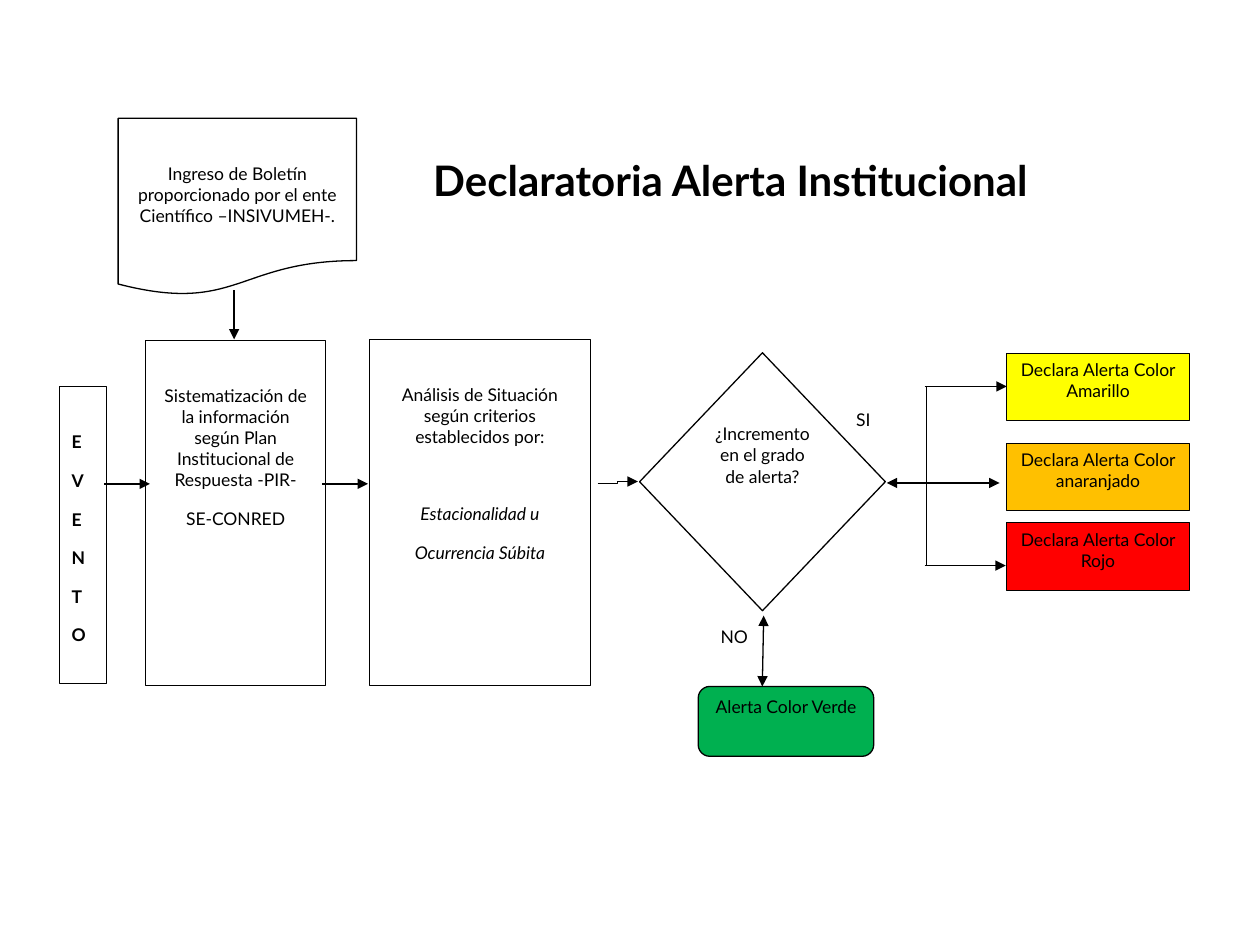
from dataclasses import dataclass, field

from lxml.etree import SubElement
from pptx import Presentation
from pptx.dml.color import RGBColor
from pptx.enum.shapes import MSO_CONNECTOR, MSO_SHAPE
from pptx.enum.text import MSO_ANCHOR, MSO_AUTO_SIZE, PP_ALIGN
from pptx.oxml.ns import qn
from pptx.util import Pt

COLORS = {
    "black": "000000",
    "white": "FFFFFF",
    "green": "00B050",
    "yellow": "FFFF00",
    "orange": "FFC000",
    "red": "FF0000",
}
BASE = {"name": "Lato", "size": Pt(10)}
BOLD = BASE | {"bold": True}
SLANT = BASE | {"italic": True}
TITLE = BOLD | {"size": Pt(24)}
INSET = {"left": 7.2, "top": 3.6, "right": 7.2, "bottom": 3.6}
LOW = INSET | {"top": 25.6}
NONE = dict.fromkeys(INSET, 0)


@dataclass
class Para:
    text: str
    style: dict
    before: float = 0
    after: float = 10


@dataclass
class Box:
    kind: MSO_SHAPE
    area: tuple[float, float, float, float]
    paras: list[Para]
    fill: str = "white"
    width: float = 0.5
    inset: dict = field(default_factory=lambda: INSET)
    align: PP_ALIGN = PP_ALIGN.CENTER


@dataclass
class Label:
    area: tuple[float, float, float, float]
    para: Para
    inset: dict
    wrap: bool = True


@dataclass
class Wire:
    start: tuple[float, float]
    end: tuple[float, float]
    tips: tuple[str, ...] = ("tailEnd",)
    kind: MSO_CONNECTOR = MSO_CONNECTOR.STRAIGHT


BOTH = ("headEnd", "tailEnd")
RECT = MSO_SHAPE.RECTANGLE
STEPS = [
    Box(MSO_SHAPE.FLOWCHART_ALTERNATE_PROCESS, (399, 392.3, 100.3, 39.9),
        [Para("Alerta Color Verde", BASE)], "green", 0.75),
    Box(MSO_SHAPE.FLOWCHART_DOCUMENT, (67.5, 67.6, 136.2, 101.4),
        [Para("Ingreso de Boletín proporcionado por el ente Científico "
              "–INSIVUMEH-.", BASE)], width=0.75, inset=LOW),
    Box(RECT, (83.2, 194.6, 102.8, 196.9),
        [Para("Sistematización de la información según Plan Institucional "
              "de Respuesta -PIR-", BASE), Para("SE-CONRED", BASE)], inset=LOW),
    Box(RECT, (33.9, 221, 27, 169.4), [Para(c, BOLD) for c in "EVENTO"],
        inset=LOW, align=PP_ALIGN.JUSTIFY),
    Box(RECT, (211, 193.9, 126.4, 197.7),
        [Para("Análisis de Situación según criterios establecidos por:", BASE),
         Para("Estacionalidad u", SLANT, before=22),
         Para("Ocurrencia Súbita", SLANT)], inset=LOW),
    Box(MSO_SHAPE.FLOWCHART_DECISION, (365.5, 201.6, 140.4, 147.4),
        [Para("¿Incremento en el grado de alerta?", BASE)], width=0.75),
]
ALERTS = [
    ("Amarillo", "yellow", 201.8),
    ("anaranjado", "orange", 253.3),
    ("Rojo", "red", 298.6),
]
WIRES = [
    Wire((133.8, 166), (133.8, 194)),
    Wire((341.5, 276.5), (364.5, 275.2), kind=MSO_CONNECTOR.ELBOW),
    Wire((529.6, 323.2), (529.6, 220.4), ()),
    Wire((528.3, 220.8), (575.3, 220.8)),
    Wire((528.3, 323.2), (574.7, 323.2)),
    Wire((184, 276.5), (210.3, 276.5)),
    Wire((59.5, 276.5), (85.7, 276.5)),
    Wire((506.7, 276), (571.2, 276), BOTH),
    Wire((436.4, 351.8), (435.6, 392.3), BOTH),
]
LABELS = [
    Label((411.8, 357.8, 33.8, 18.7), Para("NO", BASE), NONE),
    Label((489.3, 233.7, 33.8, 18.7), Para("SI", BASE), NONE),
    Label((240.5, 85, 371.5, 36.4),
          Para("Declaratoria Alerta Institucional", TITLE, after=0), INSET, False),
]


def tint(name: str) -> RGBColor:
    return RGBColor.from_string(COLORS[name])


def write(frame, paras: list[Para], inset: dict, align: PP_ALIGN) -> None:
    frame.word_wrap = True
    frame.vertical_anchor = MSO_ANCHOR.TOP
    for side, gap in inset.items():
        setattr(frame, f"margin_{side}", Pt(gap))
    for i, para in enumerate(paras):
        line = frame.add_paragraph() if i else frame.paragraphs[0]
        line.alignment = align
        if para.before:
            line.space_before = Pt(para.before)
        line.space_after = Pt(para.after)
        run = line.add_run()
        run.text = para.text
        for key, value in para.style.items():
            setattr(run.font, key, value)
        run.font.color.rgb = tint("black")


def draw_box(slide, box: Box) -> None:
    shape = slide.shapes.add_shape(box.kind, *map(Pt, box.area))
    shape.shadow.inherit = False
    shape.fill.solid()
    shape.fill.fore_color.rgb = tint(box.fill)
    shape.line.color.rgb = tint("black")
    shape.line.width = Pt(box.width)
    write(shape.text_frame, box.paras, box.inset, box.align)


def draw_wire(slide, wire: Wire) -> None:
    link = slide.shapes.add_connector(wire.kind, *map(Pt, wire.start + wire.end))
    link.line.color.rgb = tint("black")
    link.line.width = Pt(0.75)
    props = link.element.spPr
    for tip in wire.tips:
        SubElement(props.find(qn("a:ln")), qn(f"a:{tip}"), type="triangle")
    SubElement(props, qn("a:effectLst"))


def draw_label(slide, label: Label) -> None:
    frame = slide.shapes.add_textbox(*map(Pt, label.area)).text_frame
    write(frame, [label.para], label.inset, PP_ALIGN.LEFT)
    if not label.wrap:
        frame.word_wrap = False
        frame.auto_size = MSO_AUTO_SIZE.SHAPE_TO_FIT_TEXT


def main() -> None:
    deck = Presentation()
    deck.slide_width, deck.slide_height = Pt(720), Pt(540)
    slide = deck.slides.add_slide(deck.slide_layouts[6])
    alerts = [Box(RECT, (575.2, top, 104.4, 38.6),
                  [Para(f"Declara Alerta Color {name}", BASE)], fill)
              for name, fill, top in ALERTS]
    for box in STEPS + alerts:
        draw_box(slide, box)
    for wire in WIRES:
        draw_wire(slide, wire)
    for label in LABELS:
        draw_label(slide, label)
    deck.save("out.pptx")


if __name__ == "__main__":
    main()
